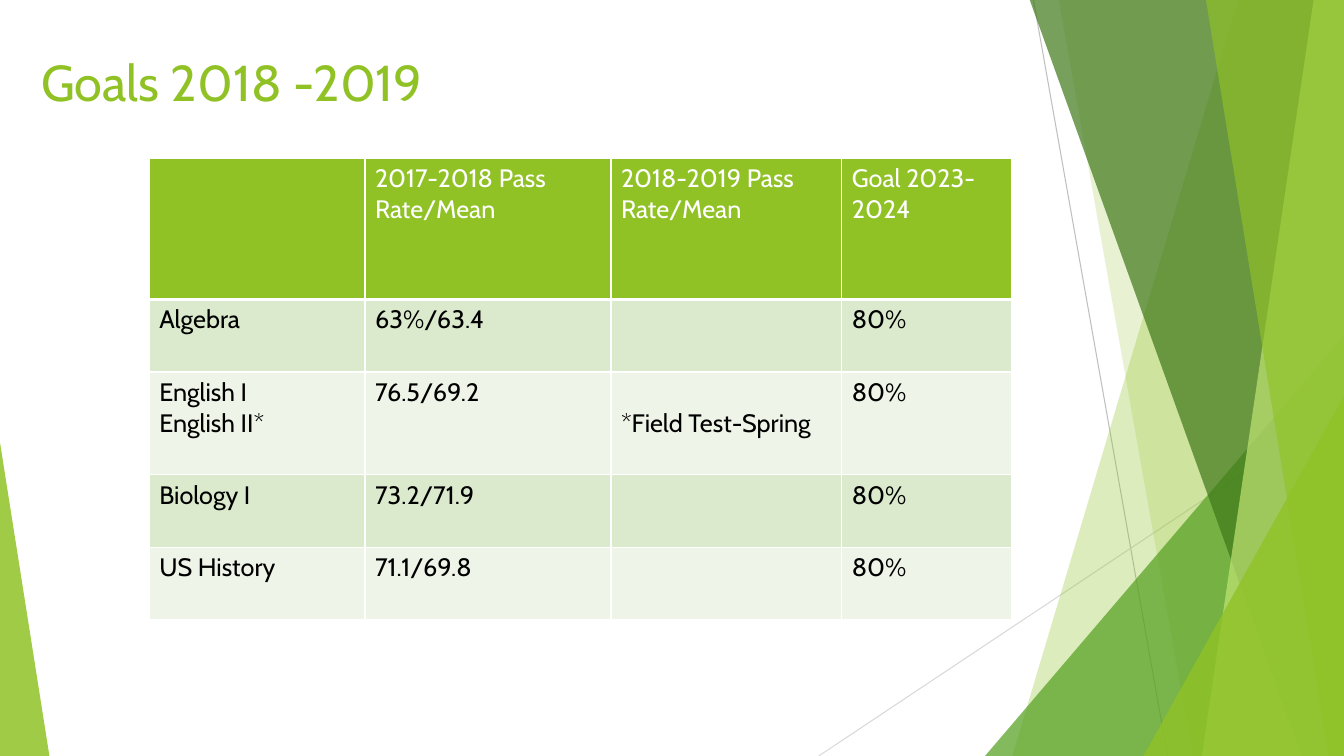
from lxml.etree import SubElement
from pptx import Presentation
from pptx.dml.color import RGBColor
from pptx.enum.shapes import MSO_CONNECTOR as CONN, MSO_SHAPE as SHAPE
from pptx.oxml.ns import qn
from pptx.util import Pt

PX = 9144  # EMU per px, 100 px to the inch
WIDTH, HEIGHT = 1333, 750
FONT = "Cabin"

WHITE = RGBColor(0xFF, 0xFF, 0xFF)
BLACK = RGBColor(0, 0, 0)
LIME = RGBColor(0x90, 0xC2, 0x26)
GREEN = RGBColor(0x54, 0xA0, 0x21)
FOREST = RGBColor(0x3F, 0x78, 0x19)
PALE_LIME = RGBColor(0xC0, 0xE4, 0x74)
BAND_DARK = RGBColor(0xDB, 0xE9, 0xCD)
BAND_LIGHT = RGBColor(0xEE, 0xF4, 0xE8)
GRAY = RGBColor(0xBF, 0xBF, 0xBF)
LIGHT_GRAY = RGBColor(0xD9, 0xD9, 0xD9)

TITLE = "Goals 2018 -2019"
ROWS = [
    ("", "2017-2018 Pass Rate/Mean", "2018-2019 Pass Rate/Mean", "Goal 2023-2024"),
    ("Algebra", "63%/63.4", "", "80%"),
    ("English I\nEnglish II*", "76.5/69.2", "*Field Test-Spring", "80%"),
    ("Biology I", "73.2/71.9", "", "80%"),
    ("US History", "71.1/69.8", "", "80%"),
]
COL_WIDTHS = [214, 244, 229, 168]
ROW_HEIGHTS = [140, 72, 102, 72, 72]
TABLE_LEFT, TABLE_TOP = 148, 157
FIELD_TEST_CELL = (2, 2)
FIELD_TEST_MARGIN = 36  # one line lower, level with English II

LINES = [((1025, 0), (1158, HEIGHT), GRAY), ((WIDTH, 403), (812, HEIGHT), LIGHT_GRAY)]

# Back to front: bands as (top-left x, bottom-left x), reaching the right edge;
# triangles as (left, top, width, apex position)
DECOR = [
    ("band", (1228, 1004), LIME, 30),
    ("band", (1050, 1183), LIME, 20),
    ("triangle", (977, 333, 356, 1), GREEN, 72),
    ("band", (1021, 1291), FOREST, 70),
    ("band", (1303, 1192), PALE_LIME, 70),
    ("band", (1196, 1318), LIME, 65),
    ("triangle", (1134, 393, 199, 1), LIME, 80),
    ("triangle", (0, 439, 49, 0), LIME, 85),
]


def px(*lengths):
    return [n * PX for n in lengths]


def add_line(shapes, start, end, color):
    s = shapes.add_connector(CONN.STRAIGHT, *px(*start, *end))
    s.line.color.rgb = color
    s.line.width = Pt(0.75)
    SubElement(s._element.spPr, qn("a:effectLst"))


def add_band(shapes, top_x, bottom_x):
    builder = shapes.build_freeform(top_x, -1, scale=PX)
    builder.add_line_segments([(WIDTH, -1), (WIDTH, HEIGHT), (bottom_x, HEIGHT)])
    return builder.convert_to_shape()


def add_triangle(shapes, left, top, width, apex):
    s = shapes.add_shape(SHAPE.ISOSCELES_TRIANGLE, *px(left, top, width, HEIGHT - top))
    s.adjustments[0] = apex
    return s


def paint(s, color, opacity):
    s.shadow.inherit = False
    s.line.fill.background()
    s.fill.solid()
    s.fill.fore_color.rgb = color
    clr = s._element.spPr.find(qn("a:solidFill"))[0]
    SubElement(clr, qn("a:alpha"), val=str(opacity * 1000))


def style_text(tf, size, color):
    for p in tf.paragraphs:
        p.font.name = FONT
        p.font.size = Pt(size)
        p.font.bold = False
        p.font.color.rgb = color


def add_borders(cell, bottom):
    """White borders, placed before the fill as the schema asks."""
    tc_pr = cell._tc.get_or_add_tcPr()
    for i, (side, width) in enumerate([("L", 1), ("R", 1), ("T", 1), ("B", bottom)]):
        ln = SubElement(tc_pr, qn(f"a:ln{side}"), w=str(Pt(width)))
        SubElement(SubElement(ln, qn("a:solidFill")), qn("a:srgbClr"), val=str(WHITE))
        tc_pr.insert(i, ln)


def add_table(shapes):
    box = px(TABLE_LEFT, TABLE_TOP, sum(COL_WIDTHS), sum(ROW_HEIGHTS))
    table = shapes.add_table(len(ROWS), len(COL_WIDTHS), *box).table
    for col, width in zip(table.columns, COL_WIDTHS):
        col.width = width * PX
    for r, (row, height) in enumerate(zip(ROWS, ROW_HEIGHTS)):
        table.rows[r].height = height * PX
        header = r == 0
        fill = LIME if header else BAND_DARK if r % 2 else BAND_LIGHT
        for c, text in enumerate(row):
            cell = table.cell(r, c)
            cell.text = text
            cell.fill.solid()
            cell.fill.fore_color.rgb = fill
            add_borders(cell, 3 if header else 1)
            style_text(cell.text_frame, 18, WHITE if header else BLACK)
    table.cell(*FIELD_TEST_CELL).margin_top = FIELD_TEST_MARGIN * PX


def main():
    prs = Presentation()
    prs.slide_width, prs.slide_height = px(WIDTH, HEIGHT)
    shapes = prs.slides.add_slide(prs.slide_layouts[6]).shapes

    for line in LINES:
        add_line(shapes, *line)
    makers = {"band": add_band, "triangle": add_triangle}
    for kind, geometry, color, opacity in DECOR:
        paint(makers[kind](shapes, *geometry), color, opacity)

    tf = shapes.add_textbox(*px(31, 46, 900, 125)).text_frame
    tf.word_wrap = True
    tf.text = TITLE
    style_text(tf, 36, LIME)

    add_table(shapes)
    prs.save("out.pptx")


if __name__ == "__main__":
    main()
